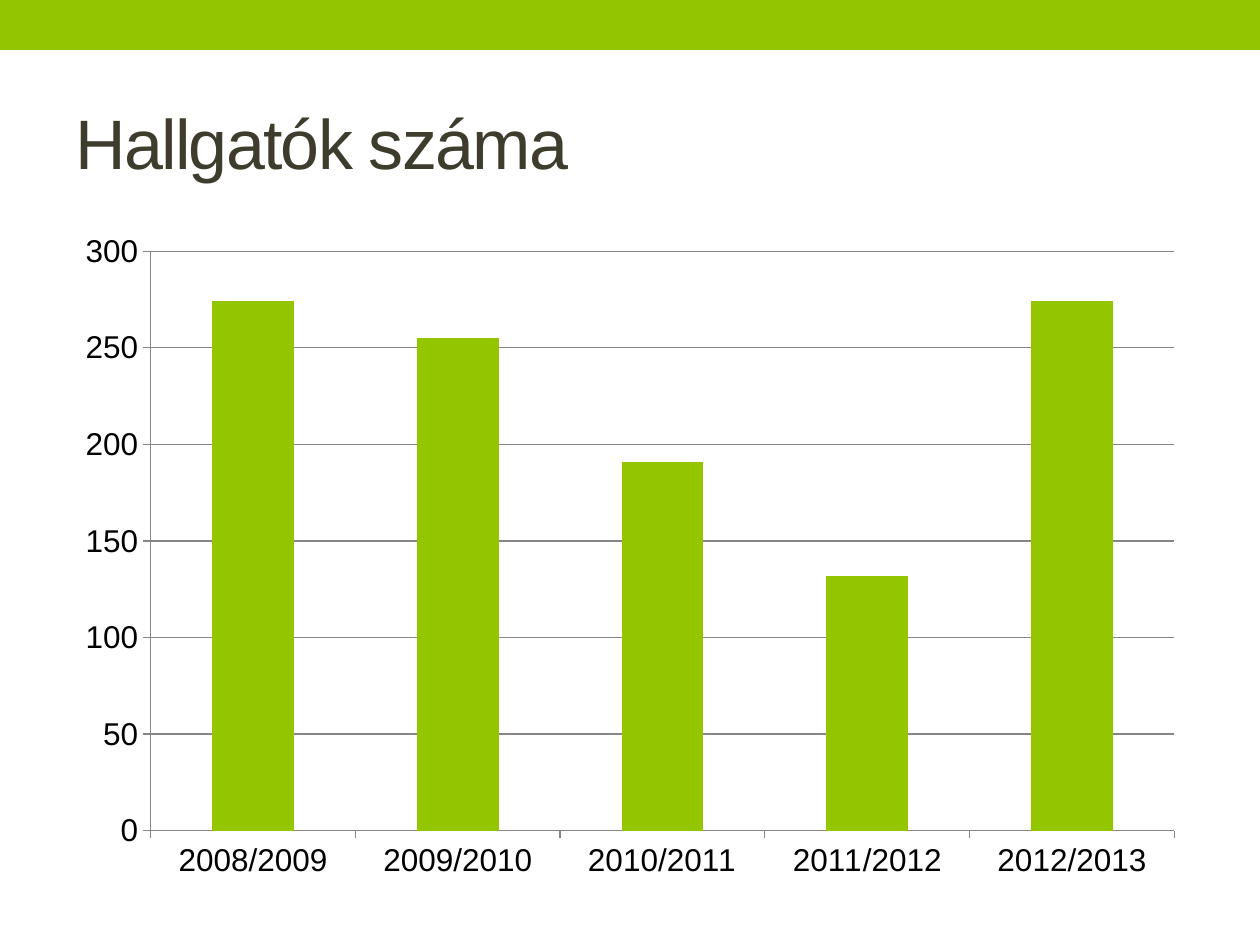
import pptx
import pptx.chart.data
import pptx.dml.color
import pptx.enum.chart
import pptx.enum.shapes
import pptx.enum.text
import pptx.util

PX = 914400 // 126
GREEN, DARK, GREY, BLACK = "94C600", "3E3D2D", "868686", "000000"
FONT = "Arial"

TITLE = "Hallgatók száma"
STUDENTS = {
    "2008/2009": 274,
    "2009/2010": 255,
    "2010/2011": 191,
    "2011/2012": 132,
    "2012/2013": 274,
}

# left, top, width, height in px
BAND_BOX = (0, 0, 1260, 50)
TITLE_BOX = (63, 73, 1134, 136)
CHART_BOX = (63, 220, 1134, 672)


def color(code):
    return pptx.dml.color.RGBColor.from_string(code)


def emu(box):
    return [length * PX for length in box]


def style_font(font, size, code):
    font.name = FONT
    font.size = pptx.util.Pt(size)
    font.color.rgb = color(code)


def style_line(line):
    line.color.rgb = color(GREY)
    line.width = pptx.util.Pt(0.75)


def add_band(slide):
    band = slide.shapes.add_shape(
        pptx.enum.shapes.MSO_SHAPE.RECTANGLE, *emu(BAND_BOX))
    band.shadow.inherit = False
    band.fill.solid()
    band.fill.fore_color.rgb = color(GREEN)
    band.line.fill.background()


def add_title(slide):
    frame = slide.shapes.add_textbox(*emu(TITLE_BOX)).text_frame
    frame.word_wrap = True
    frame.vertical_anchor = pptx.enum.text.MSO_ANCHOR.MIDDLE
    heading = frame.paragraphs[0].add_run()
    heading.text = TITLE
    style_font(heading.font, 40, DARK)
    heading.font._element.set("spc", "-100")


def add_student_chart(slide):
    data = pptx.chart.data.CategoryChartData()
    data.categories = list(STUDENTS)
    data.add_series("Series 1", list(STUDENTS.values()))
    chart = slide.shapes.add_chart(
        pptx.enum.chart.XL_CHART_TYPE.COLUMN_CLUSTERED,
        *emu(CHART_BOX), data).chart
    chart.has_title = False
    chart.has_legend = False
    style_font(chart.font, 10, BLACK)

    plot = chart.plots[0]
    plot.gap_width = 150
    plot.vary_by_categories = False
    columns = plot.series[0].format.fill
    columns.solid()
    columns.fore_color.rgb = color(GREEN)

    for axis in (chart.category_axis, chart.value_axis):
        axis.major_tick_mark = pptx.enum.chart.XL_TICK_MARK.OUTSIDE
        axis.minor_tick_mark = pptx.enum.chart.XL_TICK_MARK.NONE
        style_font(axis.tick_labels.font, 18, BLACK)
        style_line(axis.format.line)

    counts = chart.value_axis
    counts.minimum_scale, counts.maximum_scale, counts.major_unit = 0, 300, 50
    counts.has_major_gridlines = True
    style_line(counts.major_gridlines.format.line)


def main():
    deck = pptx.Presentation()
    deck.slide_width, deck.slide_height = emu((1260, 945))
    slide = deck.slides.add_slide(deck.slide_layouts[6])
    add_band(slide)
    add_title(slide)
    add_student_chart(slide)
    deck.save("out.pptx")


if __name__ == "__main__":
    main()
